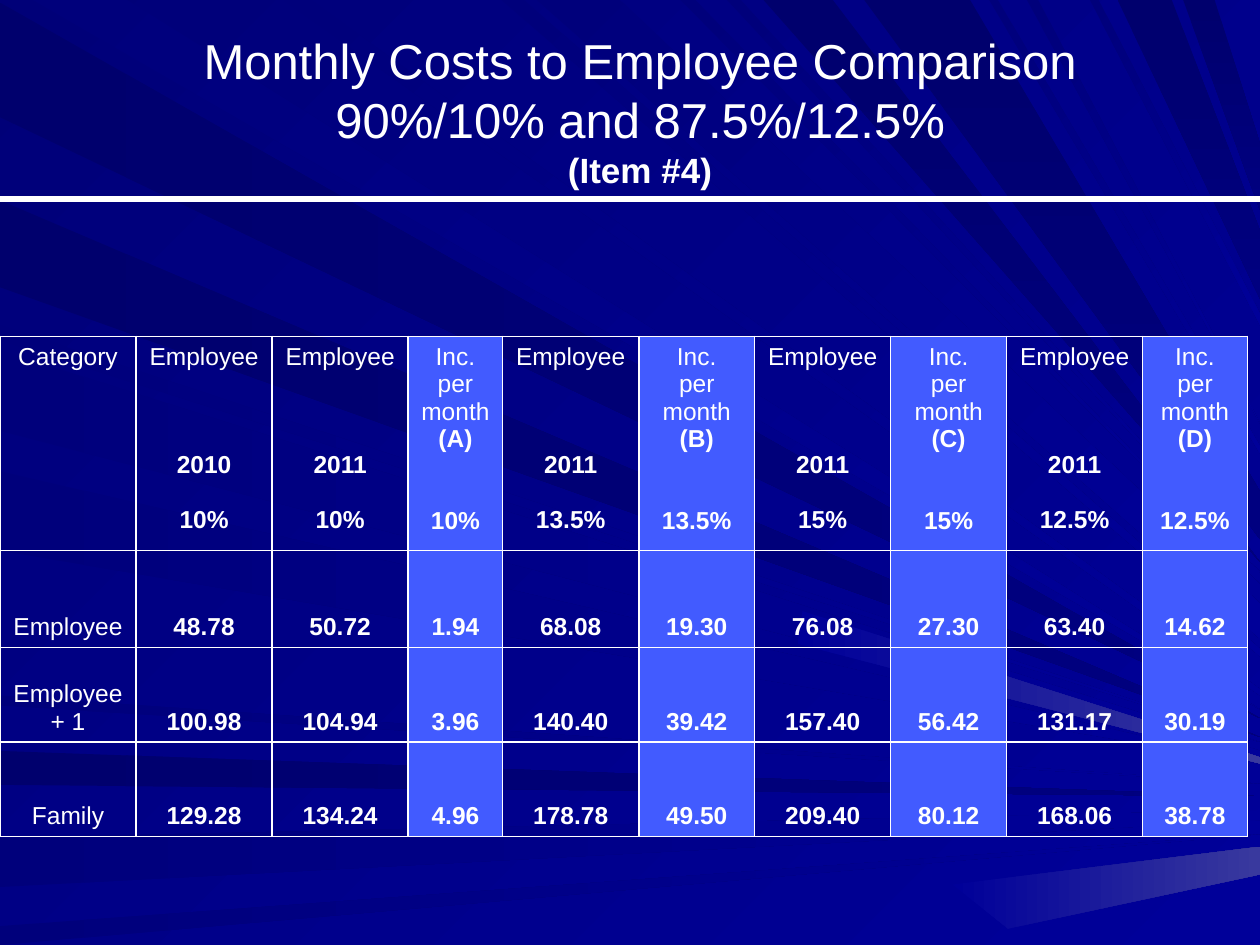
from lxml import etree
from pptx import Presentation
from pptx.dml.color import RGBColor
from pptx.enum.shapes import MSO_CONNECTOR
from pptx.enum.text import MSO_ANCHOR, PP_ALIGN
from pptx.oxml.ns import qn
from pptx.util import Inches, Pt

CENTER = PP_ALIGN.CENTER
MIDDLE, TOP, BOTTOM = MSO_ANCHOR.MIDDLE, MSO_ANCHOR.TOP, MSO_ANCHOR.BOTTOM
STRAIGHT = MSO_CONNECTOR.STRAIGHT

WIDTH, HEIGHT = 10, 7.5
FONT = "Arial"
WHITE = "FFFFFF"
INCREASE_BLUE = "425BFF"
TEXT_SIZE = 14
BLANK_LINE = 15.5

DARK = ("00006D", "000080")
LIGHT = ("00007B", "000099")
# Each ray: start and end on its own edge, then its reach on the right edge
DARK_LEFT_RAYS = [(0.02, 0.93, 5.7), (5.96, 6.23, 6.32), (1.59, 2.28, 5.85)]
LIGHT_LEFT_RAYS = [
    (6.65, 7.04, 6.51, 6.43), (7.35, 7.5, 6.62), (2.58, 2.7, 5.89),
    (2.78, 3.42, 6.02, 5.96), (3.74, 4.37, 6.06), (5.52, 5.6, 6.22),
]
DARK_TOP_RAYS = [
    (6.06, 6.61, 4.46), (8.87, 9.3, 2.37, 1.83),
    (9.39, 9.64, 1.67, 1.14), (6.86, 7.7, 4.28, 3.9),
]
LIGHT_TOP_RAYS = [
    (0.26, 1.01, 5.63), (3.98, 4.16, 5.21, 5.15), (4.26, 4.92, 5.07, 4.79),
    (5.4, 5.52, 4.63), (2.25, 2.47, 5.52, 5.47), (5.77, 5.88, 4.54),
    (7.85, 7.92, 3.6, 3.54), (8.15, 8.24, 3.36), (8.65, 8.72, 2.58, 2.49),
]
GLINTS = [
    [(7.56, 7.02), (10, 6.72), (10, 6.94), (8, 7.37)],
    [(6.37, 4.85), (10, 6.01), (10, 6.06), (6.33, 5.11)],
]

CATEGORY_WIDTH = 1.08
INCREASE_WIDTHS = [0.75, 0.92, 0.92, 0.83]
ROW_HEIGHTS = [1.63, 0.77, 0.75, 0.75]
# Each cost column: year or letter of the increase, employee share
COST_COLUMNS = [
    ("2010", "10%"), ("2011", "10%"), ("(A)", "10%"),
    ("2011", "13.5%"), ("(B)", "13.5%"), ("2011", "15%"), ("(C)", "15%"),
    ("2011", "12.5%"), ("(D)", "12.5%"),
]
COSTS = [
    ("Employee", "48.78", "50.72", "1.94", "68.08", "19.30", "76.08", "27.30", "63.40", "14.62"),
    ("Employee + 1", "100.98", "104.94", "3.96", "140.40", "39.42", "157.40", "56.42", "131.17", "30.19"),
    ("Family", "129.28", "134.24", "4.96", "178.78", "49.50", "209.40", "80.12", "168.06", "38.78"),
]


def rgb(hex_color):
    return RGBColor.from_string(hex_color)


def paint(fill, colors, angle):
    """Fill with a gradient turned clockwise by angle."""
    fill.gradient()
    fill.gradient_angle = 360 - angle
    for stop, color in zip(fill.gradient_stops, colors):
        stop.color.rgb = rgb(color)


def style_run(run, size, bold):
    run.font.name = FONT
    run.font.size = Pt(size)
    run.font.bold = bold
    run.font.color.rgb = rgb(WHITE)


def add_ray(slide, points, colors, angle):
    corners = [(Inches(x), Inches(y)) for x, y in points]
    builder = slide.shapes.build_freeform(*corners[0])
    builder.add_line_segments(corners[1:], close=True)
    ray = builder.convert_to_shape()
    ray.shadow.inherit = False
    ray.line.fill.background()
    paint(ray.fill, colors, angle)


def ray_points(from_top, start, end, low, high=None):
    near = [(start, 0), (end, 0)] if from_top else [(0, end), (0, start)]
    far = [(WIDTH, low if high is None else high), (WIDTH, low)]
    return near + far


def add_backdrop(slide):
    paint(slide.background.fill, ("000078", "000099"), 45)
    groups = [
        (False, DARK_LEFT_RAYS, DARK, 0), (True, LIGHT_TOP_RAYS, LIGHT, 45),
        (True, DARK_TOP_RAYS, DARK, 90), (False, LIGHT_LEFT_RAYS, LIGHT, 0),
    ]
    for from_top, rays, colors, angle in groups:
        for ray in rays:
            add_ray(slide, ray_points(from_top, *ray), colors, angle)
    for points in GLINTS:
        add_ray(slide, points, ("000099", "39399E"), 0)


def add_title(slide):
    title = slide.shapes.add_textbox(Inches(0.58), Inches(0.25), Inches(9), Inches(1.25))
    frame = title.text_frame
    frame.word_wrap = True
    frame.vertical_anchor = MIDDLE
    heading = frame.paragraphs[0]
    heading.text = "Monthly Costs to Employee Comparison\v90%/10% and 87.5%/12.5%\v(Item #4)"
    heading.alignment = CENTER
    for run, size, bold in zip(heading.runs, (28, 28, 20), (False, False, True)):
        style_run(run, size, bold)


def add_rule(slide):
    rule = slide.shapes.add_connector(STRAIGHT, 0, Inches(1.58), Inches(WIDTH), Inches(1.58))
    rule.line.color.rgb = rgb(WHITE)
    rule.line.width = Pt(3)
    etree.SubElement(rule._element.spPr, qn("a:effectLst"))


def add_borders(cell):
    properties = cell._tc.get_or_add_tcPr()
    for side in ("a:lnL", "a:lnR", "a:lnT", "a:lnB"):
        border = etree.SubElement(properties, qn(side), w=str(Pt(1)))
        fill = etree.SubElement(border, qn("a:solidFill"))
        etree.SubElement(fill, qn("a:srgbClr"), val=WHITE)


def fill_cell(cell, lines, anchor, highlighted):
    """Write lines of (text, bold, blank lines before)."""
    frame = cell.text_frame
    frame.text = "\n".join(text for text, _, _ in lines)
    cell.vertical_anchor = anchor
    for paragraph, (_, bold, gap) in zip(frame.paragraphs, lines):
        paragraph.alignment = CENTER
        if gap:
            paragraph.space_before = Pt(gap * BLANK_LINE)
        for run in paragraph.runs:
            style_run(run, TEXT_SIZE, bold)
    add_borders(cell)
    if highlighted:
        cell.fill.solid()
        cell.fill.fore_color.rgb = rgb(INCREASE_BLUE)
    else:
        cell.fill.background()


def header_lines(label, share):
    if label.startswith("("):
        return [("Inc.", False, 0), ("per month", False, 0), (label, True, 0), (share, True, 2)]
    return [("Employee", False, 0), (label, True, 3), (share, True, 1)]


def add_cost_table(slide):
    increases = [False] + [label.startswith("(") for label, _ in COST_COLUMNS]
    narrow = iter(INCREASE_WIDTHS)
    widths = [next(narrow) if increase else CATEGORY_WIDTH for increase in increases]
    table = slide.shapes.add_table(
        len(ROW_HEIGHTS), len(widths), 0, Inches(2.67),
        Inches(sum(widths)), Inches(sum(ROW_HEIGHTS))).table
    table.first_row = table.horz_banding = False
    for column, width in zip(table.columns, widths):
        column.width = Inches(width)
    for row, height in zip(table.rows, ROW_HEIGHTS):
        row.height = Inches(height)

    fill_cell(table.cell(0, 0), [("Category", False, 0)], TOP, False)
    for c, (label, share) in enumerate(COST_COLUMNS, 1):
        fill_cell(table.cell(0, c), header_lines(label, share), TOP, increases[c])
    for r, costs in enumerate(COSTS, 1):
        for c, value in enumerate(costs):
            fill_cell(table.cell(r, c), [(value, c > 0, 0)], BOTTOM, increases[c])


def main():
    deck = Presentation()
    deck.slide_width, deck.slide_height = Inches(WIDTH), Inches(HEIGHT)
    slide = deck.slides.add_slide(deck.slide_layouts[6])
    add_backdrop(slide)
    add_title(slide)
    add_cost_table(slide)
    add_rule(slide)
    deck.save("out.pptx")


if __name__ == "__main__":
    main()
